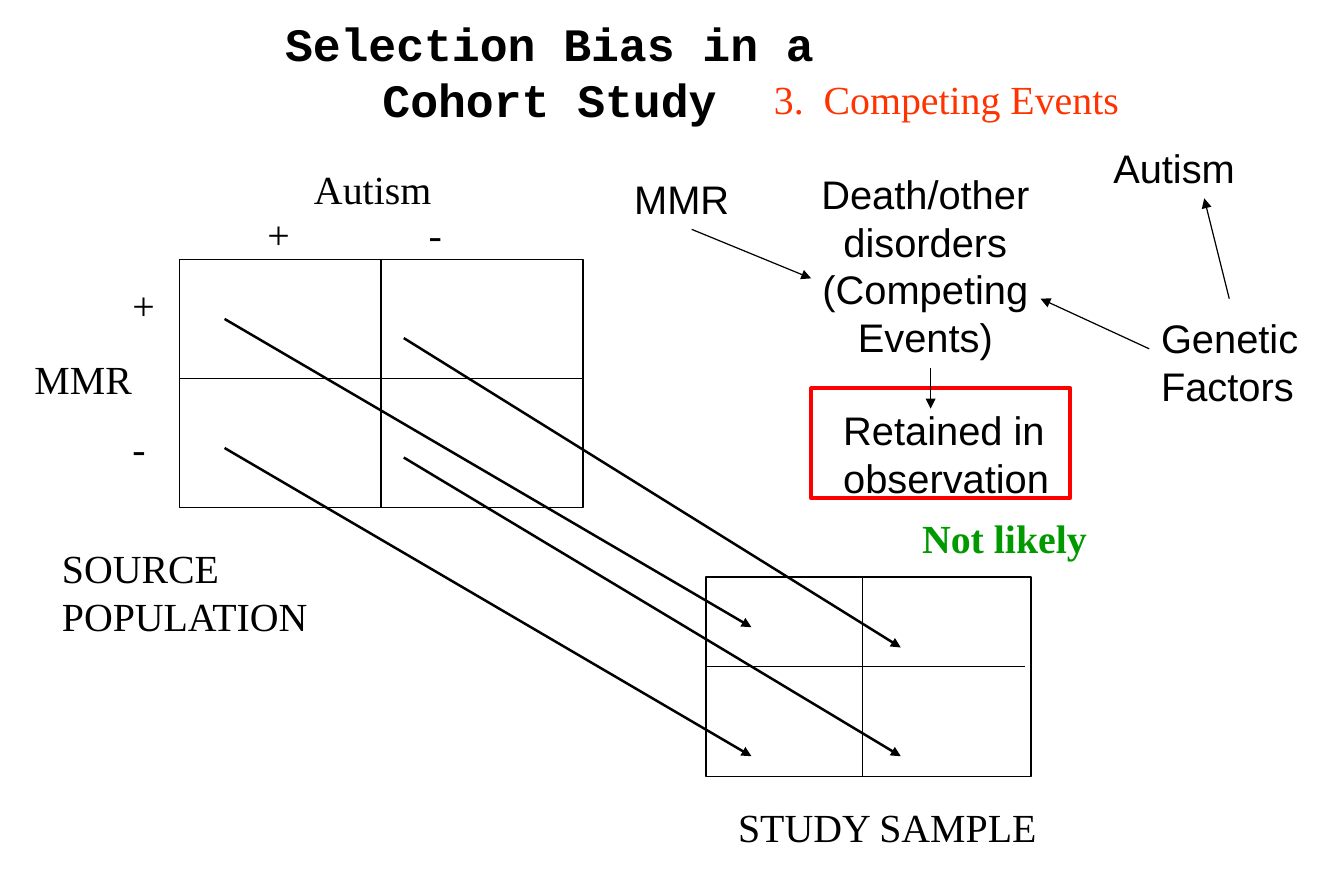
import pptx
import pptx.util
import pptx.dml.color
import pptx.enum.shapes
import pptx.enum.text
import pptx.oxml
import pptx.oxml.ns
import lxml.etree

Inches = pptx.util.Inches
COLORS = {"ink": "000000", "red": "FF0000", "orange": "FF3300", "green": "009900"}
SERIF, SANS, MONO = "Times New Roman", "Arial", "Courier New"

# left, top, width, height
SOURCE_TABLE = (1.5, 2.17, 3.38, 2.08)
STUDY_TABLE = (5.91, 4.83, 2.72, 1.67)
RETAINED_FRAME = (6.79, 3.25, 2.17, 0.92)

# start, end
DIVIDERS = [
    ((1.5, 3.17), (4.88, 3.17)),
    ((7.22, 4.83), (7.22, 6.5)),
    ((5.91, 5.58), (8.58, 5.58)),
]
SELECTION_ARROWS = [
    ((1.88, 2.67), (6.29, 5.25)),
    ((1.88, 3.75), (6.29, 6.33)),
    ((3.38, 2.83), (7.54, 5.42)),
    ((3.38, 3.83), (7.54, 6.33)),
]
CAUSAL_ARROWS = [
    ((5.79, 1.92), (6.79, 2.33)),
    ((10.29, 2.5), (10.08, 1.66)),
    ((9.62, 2.92), (8.71, 2.5)),
    ((7.79, 3.08), (7.79, 3.42)),
]

# text, (left, top, width, height), font, format that differs from the default
LABELS = [
    ("Selection Bias in a Cohort Study", (2.2, 0.08, 4.8, 1.02), MONO,
     {"size": 28, "bold": True, "center": True}),
    ("3.  Competing Events", (6.38, 0.58, 4.7, 0.5), SERIF, {"color": "orange"}),
    ("Autism", (2.53, 1.33, 1.18, 0.5), SERIF, {"wrap": False}),
    ("+", (2.14, 1.71, 0.44, 0.5), SERIF, {}),
    ("-", (3.49, 1.71, 0.44, 0.5), SERIF, {}),
    ("MMR", (0.19, 2.92, 1.02, 0.5), SERIF, {"wrap": False}),
    ("+", (1.01, 2.3, 0.44, 0.5), SERIF, {}),
    ("-", (1.01, 3.5, 0.44, 0.5), SERIF, {}),
    ("SOURCE POPULATION", (0.42, 4.5, 2.5, 0.9), SERIF, {}),
    ("STUDY SAMPLE", (6.08, 6.67, 2.71, 0.5), SERIF, {"wrap": False}),
    ("Not likely", (7.62, 4.25, 3, 0.5), SERIF, {"color": "green", "bold": True}),
    ("MMR", (5.21, 1.41, 1, 0.5), SANS, {"wrap": False}),
    ("Autism", (9.22, 1.15, 1.22, 0.5), SANS, {"wrap": False}),
    ("Death/other disorders (Competing Events)", (6.37, 1.37, 2.75, 1.72), SANS,
     {"center": True}),
    ("Retained in observation", (6.96, 3.35, 2.92, 0.9), SANS, {}),
    ("Genetic Factors", (9.62, 2.58, 1.62, 0.9), SANS, {}),
]


def rgb(name):
    return pptx.dml.color.RGBColor.from_string(COLORS[name])


def set_line(line, color, width):
    line.color.rgb = rgb(color)
    line.width = pptx.util.Pt(width)


def add_frame(slide, box, color="ink", width=0.75):
    frame = slide.shapes.add_shape(
        pptx.enum.shapes.MSO_SHAPE.RECTANGLE, *map(Inches, box))
    frame.fill.background()
    frame.shadow.inherit = False
    set_line(frame.line, color, width)
    return frame


def add_line(slide, start, end, width=0.75, arrow=False):
    line = slide.shapes.add_connector(
        pptx.enum.shapes.MSO_CONNECTOR.STRAIGHT, *map(Inches, start + end))
    set_line(line.line, "ink", width)
    if arrow:
        head = lxml.etree.SubElement(
            line.line._get_or_add_ln(), pptx.oxml.ns.qn("a:tailEnd"))
        head.set("type", "triangle")
    lxml.etree.SubElement(line._element.spPr, pptx.oxml.ns.qn("a:effectLst"))
    return line


def add_label(slide, text, box, font, style):
    label = slide.shapes.add_textbox(*map(Inches, box)).text_frame
    label.word_wrap = style.get("wrap", True)
    label.auto_size = pptx.enum.text.MSO_AUTO_SIZE.SHAPE_TO_FIT_TEXT
    paragraph = label.paragraphs[0]
    if style.get("center"):
        paragraph.alignment = pptx.enum.text.PP_ALIGN.CENTER
    run = paragraph.add_run()
    run.text = text
    values = {"name": font, "size": pptx.util.Pt(style.get("size", 24)),
              "bold": style.get("bold", False)}
    for name, value in values.items():
        setattr(run.font, name, value)
    run.font.color.rgb = rgb(style.get("color", "ink"))


def main():
    deck = pptx.Presentation()
    deck.slide_width, deck.slide_height = Inches(11.25), Inches(7.5)
    slide = deck.slides.add_slide(deck.slide_layouts[6])

    source_table = add_frame(slide, SOURCE_TABLE)
    add_frame(slide, STUDY_TABLE)
    left, top, width, height = SOURCE_TABLE
    middle = left + width / 2
    source_divider = add_line(slide, (middle, top), (middle, top + height))
    source_divider.begin_connect(source_table, 0)
    source_divider.end_connect(source_table, 2)
    for start, end in DIVIDERS:
        add_line(slide, start, end)

    for label in LABELS:
        add_label(slide, *label)
    add_frame(slide, RETAINED_FRAME, "red", 2.25)
    for arrows, weight in ((SELECTION_ARROWS, 1.5), (CAUSAL_ARROWS, 0.75)):
        for start, end in arrows:
            add_line(slide, start, end, weight, arrow=True)

    deck.save("out.pptx")


if __name__ == "__main__":
    main()
